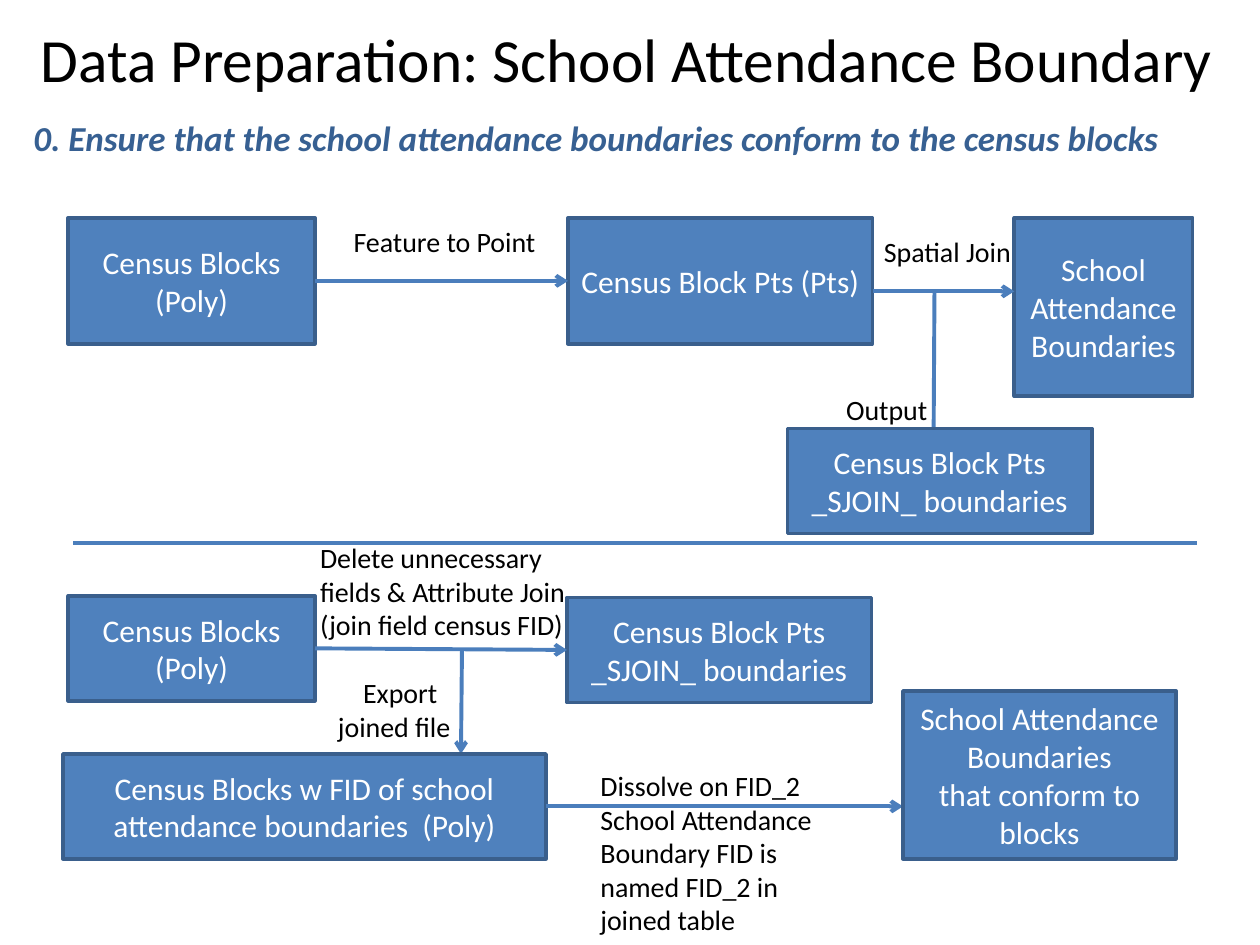
from pptx import Presentation
from pptx.dml.color import RGBColor
from pptx.enum.shapes import MSO_CONNECTOR as Conn, MSO_SHAPE as Form
from pptx.enum.text import MSO_ANCHOR as Anchor, PP_ALIGN as Align
from pptx.oxml.ns import qn
from pptx.util import Inches, Pt
from lxml.etree import SubElement as Sub


def tint(code):
    return RGBColor.from_string(code)


class Chart:
    font = "Calibri"
    fill, edge, wire = "4F81BD", "3A5F8C", "4B7EBC"
    white, black, navy = "FFFFFF", "000000", "376092"
    cols, rows = 120, 90

    def __init__(self, deck):
        self.wide, self.high = deck.slide_width, deck.slide_height
        self.slide = deck.slides.add_slide(deck.slide_layouts[6])
        self.shapes = self.slide.shapes

    def x(self, col):
        return round(self.wide * col / self.cols)

    def y(self, row):
        return round(self.high * row / self.rows)

    def area(self, x, y, w, h):
        return self.x(x), self.y(y), self.x(w), self.y(h)

    def letter(self, shape, text, size, color, align, anchor, indent=0, strong=False):
        frame = shape.text_frame
        frame.word_wrap = True
        frame.vertical_anchor = anchor
        frame.text = text
        for para in frame.paragraphs:
            para.alignment = align
            font = para.font
            font.name, font.size = self.font, Pt(size)
            font.color.rgb = tint(color)
            if strong:
                font.bold = font.italic = True
            if indent:
                para._p.get_or_add_pPr().set("indent", str(Inches(indent)))

    def box(self, text, *place):
        shape = self.shapes.add_shape(Form.RECTANGLE, *self.area(*place))
        shape.shadow.inherit = False
        shape.fill.solid()
        shape.fill.fore_color.rgb = tint(self.fill)
        shape.line.color.rgb = tint(self.edge)
        shape.line.width = Pt(2)
        self.letter(shape, text, 18, self.white, Align.CENTER, Anchor.MIDDLE)
        return shape

    def label(self, text, *place, size=16, color=black, align=Align.LEFT,
              anchor=Anchor.TOP, indent=0, strong=False):
        shape = self.shapes.add_textbox(*self.area(*place))
        self.letter(shape, text, size, color, align, anchor, indent, strong)

    def line(self, x1, y1, x2, y2, start=None, end=None, head=True):
        link = self.shapes.add_connector(
            Conn.STRAIGHT, self.x(x1), self.y(y1), self.x(x2), self.y(y2))
        if start:
            link.begin_connect(start, 3)
        if end:
            link.end_connect(end, 1)
        link.line.color.rgb = tint(self.wire)
        link.line.width = Pt(2.25)
        props = link._element.spPr
        if head:
            Sub(props.find(qn("a:ln")), qn("a:tailEnd"), type="arrow")
        Sub(props, qn("a:effectLst"))


def main():
    deck = Presentation()
    deck.slide_width, deck.slide_height = Inches(10), Inches(7.5)
    flow = Chart(deck)
    poly, joined = "Census Blocks (Poly)", "Census Block Pts _SJOIN_ boundaries"

    flow.label("Data Preparation: School Attendance Boundary", -15, -2, 148, 15,
               size=35.1, align=Align.CENTER, anchor=Anchor.MIDDLE, indent=0.11)
    flow.label("0. Ensure that the school attendance boundaries conform to the census blocks",
               2, 10.5, 112, 5.25, size=20, color=flow.navy, strong=True)

    blocks = flow.box(poly, 6.5, 20.75, 23.5, 12)
    points = flow.box("Census Block Pts (Pts)", 54.1, 20.75, 29, 12)
    flow.line(30, 26.75, 54.1, 26.75, blocks, points)
    flow.label("Feature to Point", 30.1, 20.75, 23, 4.4, indent=0.2)
    flow.box("School Attendance Boundaries", 96.6, 20.75, 17, 17)
    flow.line(83.1, 27.75, 96.6, 27.75)
    flow.label("Spatial Join", 80.6, 21.75, 23, 4.4, indent=0.2)
    flow.line(89, 27.75, 88.9, 43.8)
    flow.box(joined, 75, 40.8, 29, 10)
    flow.label("Output", 77, 36.75, 14, 4.4, indent=0.2)

    flow.line(7, 51.75, 114, 51.75, head=False)

    source = flow.box(poly, 6.5, 56.75, 23.5, 10)
    target = flow.box(joined, 54, 56.9, 29, 10)
    flow.line(30, 61.75, 54, 61.9, source, target)
    flow.label("Delete unnecessary fields & Attribute Join (join field census FID)",
               29.3, 50.9, 28, 10.9)
    flow.line(44, 61.8, 43.9, 71.8)
    flow.label("Export joined file", 31, 63.75, 14, 7.7, indent=0.2)
    tagged = flow.box("Census Blocks w FID of school attendance boundaries  (Poly)",
                      6, 71.8, 46, 10)
    flow.line(52, 76.8, 86, 76.8, tagged)
    flow.box("School Attendance Boundaries\nthat conform to blocks", 86, 65.8, 26, 16)
    flow.label("Dissolve on FID_2 School Attendance Boundary FID is named FID_2 in joined table",
               56, 72.6, 26, 17.4)
    deck.save("out.pptx")


if __name__ == "__main__":
    main()
